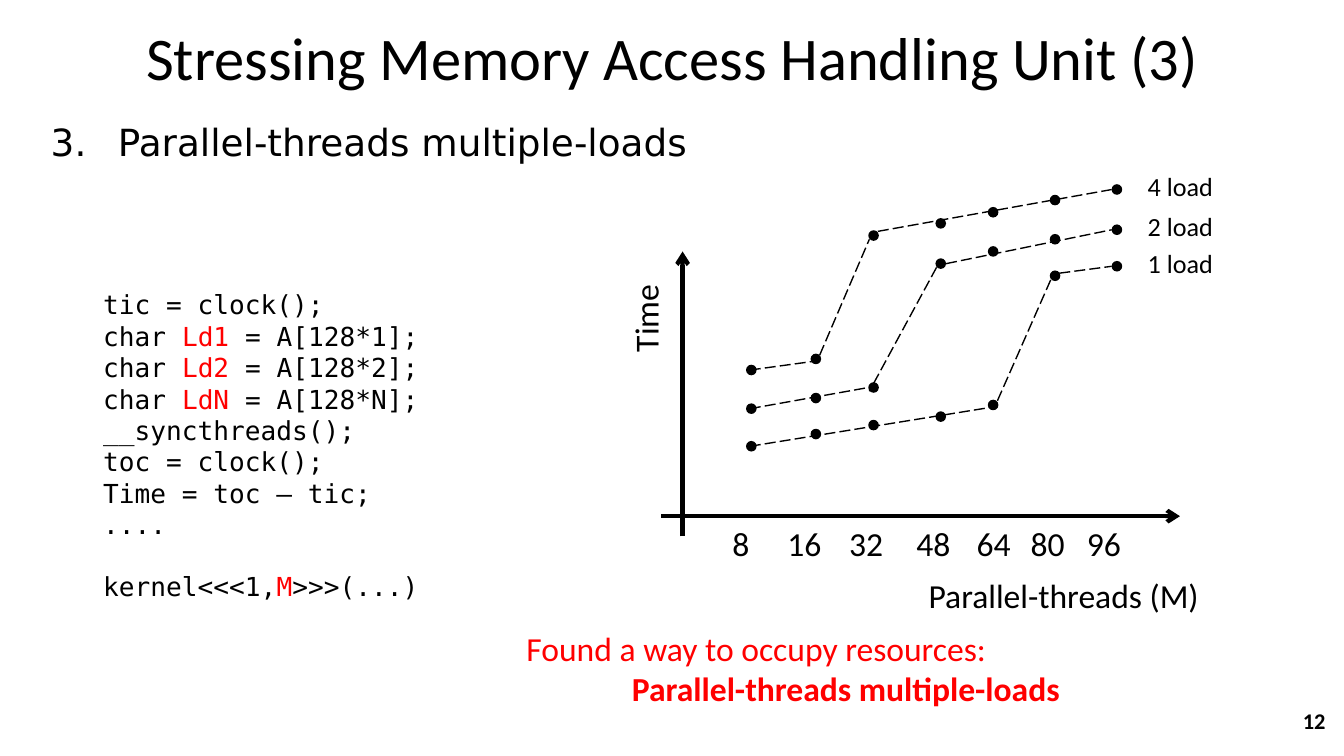
import pptx
import pptx.util
import pptx.dml.color
import pptx.enum.dml
import pptx.enum.shapes
import pptx.enum.text
import pptx.oxml.ns
import lxml.etree

Cm = pptx.util.Cm
Pt = pptx.util.Pt
ALIGN = pptx.enum.text.PP_ALIGN
MIDDLE = pptx.enum.text.MSO_ANCHOR.MIDDLE
BLACK = "000000"
RED = "FF0000"


def color(value):
    return pptx.dml.color.RGBColor.from_string(value)


def add_text(place, lines, size, font="Calibri", align=ALIGN.LEFT, wrap=False):
    box = page.shapes.add_textbox(*[Cm(length) for length in place])
    box.text_frame.word_wrap = wrap
    for number, line in enumerate(lines):
        para = box.text_frame.paragraphs[0] if number == 0 else box.text_frame.add_paragraph()
        para.alignment = align
        for words, tint, bold in line:
            span = para.add_run()
            span.text = words
            span.font.name = font
            span.font.size = Pt(size)
            span.font.bold = bold
            span.font.color.rgb = color(tint)
    return box


def add_line(ends, width):
    line = page.shapes.add_connector(
        pptx.enum.shapes.MSO_CONNECTOR.STRAIGHT, *[Cm(length) for length in ends])
    line.line.color.rgb = color(BLACK)
    line.line.width = Pt(width)
    lxml.etree.SubElement(line._element.spPr, pptx.oxml.ns.qn("a:effectLst"))
    return line


deck = pptx.Presentation()
deck.slide_width = Cm(25.4)
deck.slide_height = Cm(14.28)
page = deck.slides.add_slide(deck.slide_layouts[6])

title = add_text((0.71, 0.36, 24, 1.4), [[("Stressing Memory Access Handling Unit (3)", BLACK, False)]],
                 32.4, align=ALIGN.CENTER, wrap=True)
title.text_frame.vertical_anchor = MIDDLE

heading = add_text((0.71, 2.13, 24, 10.62), [[("Parallel-threads multiple-loads", BLACK, False)]],
                   20, "DejaVu Sans", wrap=True)
para = heading.text_frame.paragraphs[0]
para.space_before = Pt(4)
settings = para._p.get_or_add_pPr()
settings.set("marL", str(Cm(1.27)))
settings.set("indent", str(Cm(-1.27)))
bullet = lxml.etree.SubElement(settings, pptx.oxml.ns.qn("a:buAutoNum"))
bullet.set("type", "arabicPeriod")
bullet.set("startAt", "3")

number = add_text((18.11, 13.23, 7.19, 0.76), [[("12", BLACK, True)]], 12, align=ALIGN.RIGHT, wrap=True)
number.text_frame.vertical_anchor = MIDDLE

code = [[("tic = clock();", BLACK, False)]]
for name, index in [("Ld1", "1"), ("Ld2", "2"), ("LdN", "N")]:
    code.append([("char ", BLACK, False), (name, RED, False), (f" = A[128*{index}];", BLACK, False)])
for statement in ["__syncthreads();", "toc = clock();", "Time = toc – tic;", "...."]:
    code.append([(statement, BLACK, False)])
code.append([("kernel<<<1,", BLACK, False), ("M", RED, False), (">>>(...)", BLACK, False)])
listing = add_text((1.7, 5.33, 6.48, 6.25), code, 14, "DejaVu Sans Mono")
listing.text_frame.paragraphs[-1].space_before = Pt(16.3)

for ends in [(12.5, 9.75, 22.3, 9.75), (12.9, 10.13, 12.9, 4.75)]:
    axis = add_line(ends, 2.25)
    head = lxml.etree.SubElement(axis.line._get_or_add_ln(), pptx.oxml.ns.qn("a:tailEnd"))
    head.set("type", "arrow")

add_text((17.3, 10.74, 5.69, 1.02), [[("Parallel-threads (M)", BLACK, False)]], 18)
time_label = add_text((11.3, 5.49, 1.8, 1.02), [[("Time", BLACK, False)]], 18)
time_label.rotation = 270

threads = [("8", 13.59, 0.84), ("16", 14.63, 1.17), ("32", 15.8, 1.17), ("48", 17.07, 1.17),
           ("64", 18.21, 1.17), ("80", 19.23, 1.17), ("96", 20.29, 1.17)]
for count, left, width in threads:
    add_text((left, 9.75, width, 1.02), [[(count, BLACK, False)]], 18)

dot_size = 0.2
dot_columns = [14.2, 15.42, 16.51, 17.78, 18.77, 19.94, 21.11]
curves = [
    ("1 load", 4.55, [8.43, 8.2, 8.03, 7.87, 7.65, 5.21, 5.03],
     [(14.17, 8.43, 18.69, 7.7), (18.85, 7.57, 19.86, 5.28), (20.02, 5.16, 21.01, 5.03)]),
    ("2 load", 3.84, [7.72, 7.52, 7.32, 4.98, 4.75, 4.52, 4.34],
     [(14.17, 7.72, 16.41, 7.32), (17.7, 5.05, 16.43, 7.39), (17.88, 4.98, 21.01, 4.34)]),
    ("4 load", 3.1, [6.99, 6.78, 4.45, 4.22, 4.01, 3.78, 3.58],
     [(14.17, 6.99, 15.34, 6.83), (15.49, 6.71, 16.43, 4.52), (16.59, 4.37, 21.01, 3.58)]),
]
for label, label_top, dot_rows, segments in curves:
    for ends in segments:
        segment = add_line(ends, 0.75)
        segment.line.dash_style = pptx.enum.dml.MSO_LINE.LONG_DASH
    for x, y in zip(dot_columns, dot_rows):
        dot = page.shapes.add_shape(pptx.enum.shapes.MSO_SHAPE.OVAL, Cm(x - dot_size / 2),
                                    Cm(y - dot_size / 2), Cm(dot_size), Cm(dot_size))
        dot.shadow.inherit = False
        dot.fill.solid()
        dot.fill.fore_color.rgb = color(BLACK)
        dot.line.fill.background()
    add_text((21.44, label_top, 1.75, 0.86), [[(label, BLACK, False)]], 14)

finding = add_text((9.7, 11.73, 10.59, 1.8),
                   [[("Found a way to occupy resources:", RED, False)],
                    [("Parallel-threads multiple-loads", RED, True)]], 18, wrap=True)
finding.text_frame.paragraphs[1].alignment = ALIGN.RIGHT

deck.save("out.pptx")
